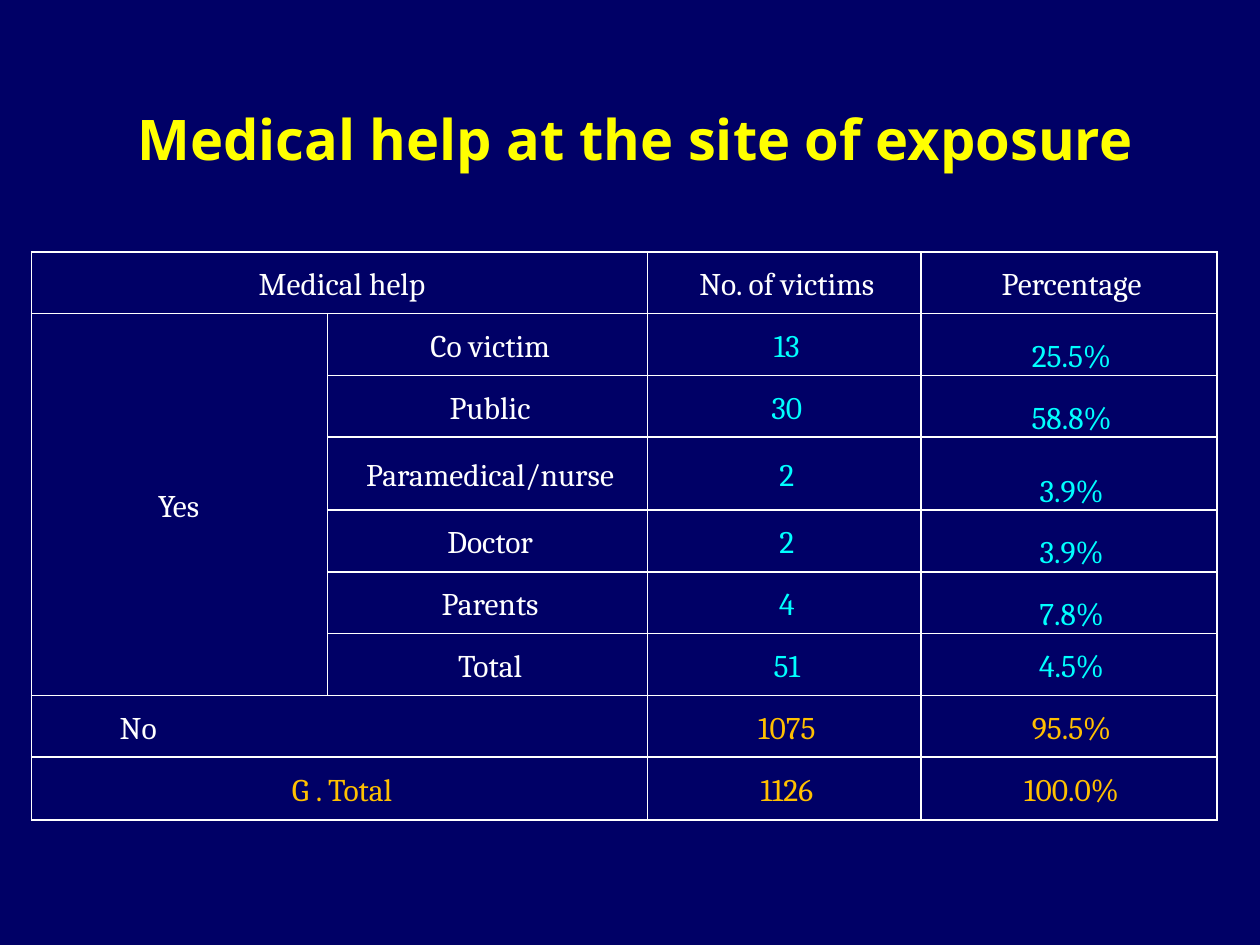
"""Build the slide on medical help given to victims at the site of exposure."""
from dataclasses import dataclass

from lxml import etree
from pptx import Presentation
from pptx.dml.color import RGBColor
from pptx.enum.text import MSO_ANCHOR, PP_ALIGN
from pptx.oxml.ns import qn
from pptx.util import Inches, Pt

NAVY = RGBColor(0x00, 0x00, 0x66)
YELLOW = RGBColor(0xFF, 0xFF, 0x00)
WHITE = RGBColor(0xFF, 0xFF, 0xFF)
CYAN = RGBColor(0x00, 0xFF, 0xFF)
AMBER = RGBColor(0xFF, 0xC0, 0x00)
CENTER, LEFT = PP_ALIGN.CENTER, PP_ALIGN.LEFT
MIDDLE, BOTTOM = MSO_ANCHOR.MIDDLE, MSO_ANCHOR.BOTTOM

COLUMN_WIDTHS = (2.35, 2.54, 2.17, 2.35)
ROW_HEIGHT = 0.49
SPECIAL_HEIGHTS = {3: 0.58, 8: 0.5}
MERGES = (((0, 0), (0, 1)), ((1, 0), (6, 0)), ((7, 0), (7, 1)), ((8, 0), (8, 1)))


@dataclass(frozen=True)
class Row:
    labels: tuple[str, str]
    victims: str
    percentage: str
    label_color: RGBColor = WHITE
    value_color: RGBColor = CYAN
    percentage_anchor: MSO_ANCHOR = MIDDLE
    label_align: PP_ALIGN = CENTER
    label_indent: float = 0.04


ROWS = (
    Row(("Medical help", ""), "No. of victims", "Percentage", value_color=WHITE),
    Row(("Yes ", "Co victim"), "13", "25.5%", percentage_anchor=BOTTOM),
    Row(("", "Public"), "30", "58.8%", percentage_anchor=BOTTOM),
    Row(("", "Paramedical/nurse"), "2", "3.9%", percentage_anchor=BOTTOM),
    Row(("", "Doctor"), "2", "3.9%", percentage_anchor=BOTTOM),
    Row(("", "Parents"), "4", "7.8%", percentage_anchor=BOTTOM),
    Row(("", "Total"), "51", "4.5%"),
    Row(("No", ""), "1075", "95.5%", value_color=AMBER, label_align=LEFT, label_indent=0.7),
    Row(("G . Total", ""), "1126", "100.0%", label_color=AMBER, value_color=AMBER),
)


def write_text(para, text: str, *, font: str, size: float, color: RGBColor,
               bold: bool = False, align: PP_ALIGN = CENTER,
               indent: float = 0, line_spacing: float = 1.0) -> None:
    para.alignment = align
    para.line_spacing = line_spacing
    properties = para._p.get_or_add_pPr()
    properties.set("marL", str(Inches(indent)))
    properties.set("indent", "0")
    span = para.add_run()
    span.text = text
    span.font.name = font
    span.font.size = Pt(size)
    span.font.bold = bold
    span.font.color.rgb = color


def add_borders(cell, color: RGBColor, width: float) -> None:
    properties = cell._tc.get_or_add_tcPr()
    for position, side in enumerate(("a:lnL", "a:lnR", "a:lnT", "a:lnB")):
        line = etree.Element(qn(side), w=str(Pt(width)))
        fill = etree.SubElement(line, qn("a:solidFill"))
        etree.SubElement(fill, qn("a:srgbClr"), val=str(color))
        properties.insert(position, line)


def format_cell(cell) -> None:
    cell.fill.solid()
    cell.fill.fore_color.rgb = NAVY
    cell.margin_left = cell.margin_right = cell.margin_top = cell.margin_bottom = 0
    cell.vertical_anchor = MIDDLE
    add_borders(cell, WHITE, 1)


def fill_row(cells, row: Row) -> None:
    texts = (*row.labels, row.victims, row.percentage)
    for column, (cell, text) in enumerate(zip(cells, texts)):
        format_cell(cell)
        is_label = column < 2
        if text:
            write_text(cell.text_frame.paragraphs[0], text, font="Cambria", size=18,
                       color=row.label_color if is_label else row.value_color,
                       align=row.label_align if is_label else CENTER,
                       indent=row.label_indent if is_label else 0.04,
                       line_spacing=1.15)
    cells[3].vertical_anchor = row.percentage_anchor


def add_title(page, text: str) -> None:
    box = page.shapes.add_textbox(Inches(0.67), Inches(0.53), Inches(8.75), Inches(1.13))
    frame = box.text_frame
    frame.word_wrap = True
    frame.vertical_anchor = MIDDLE
    write_text(frame.paragraphs[0], text, font="Open Sans", size=32, color=YELLOW, bold=True)


def add_victim_table(page) -> None:
    table = page.shapes.add_table(len(ROWS), len(COLUMN_WIDTHS), Inches(0.25), Inches(2),
                                  Inches(9.42), Inches(4.5)).table
    table.first_row = table.horz_banding = False
    for column, width in zip(table.columns, COLUMN_WIDTHS):
        column.width = Inches(width)
    for index, row in enumerate(ROWS):
        table.rows[index].height = Inches(SPECIAL_HEIGHTS.get(index, ROW_HEIGHT))
        fill_row(table.rows[index].cells, row)
    for start, end in MERGES:
        table.cell(*start).merge(table.cell(*end))


def main() -> None:
    deck = Presentation()
    deck.slide_width, deck.slide_height = Inches(10), Inches(7.5)
    page = deck.slides.add_slide(deck.slide_layouts[6])
    page.background.fill.solid()
    page.background.fill.fore_color.rgb = NAVY
    add_title(page, "Medical help at the site of exposure")
    add_victim_table(page)
    deck.save("out.pptx")


if __name__ == "__main__":
    main()
